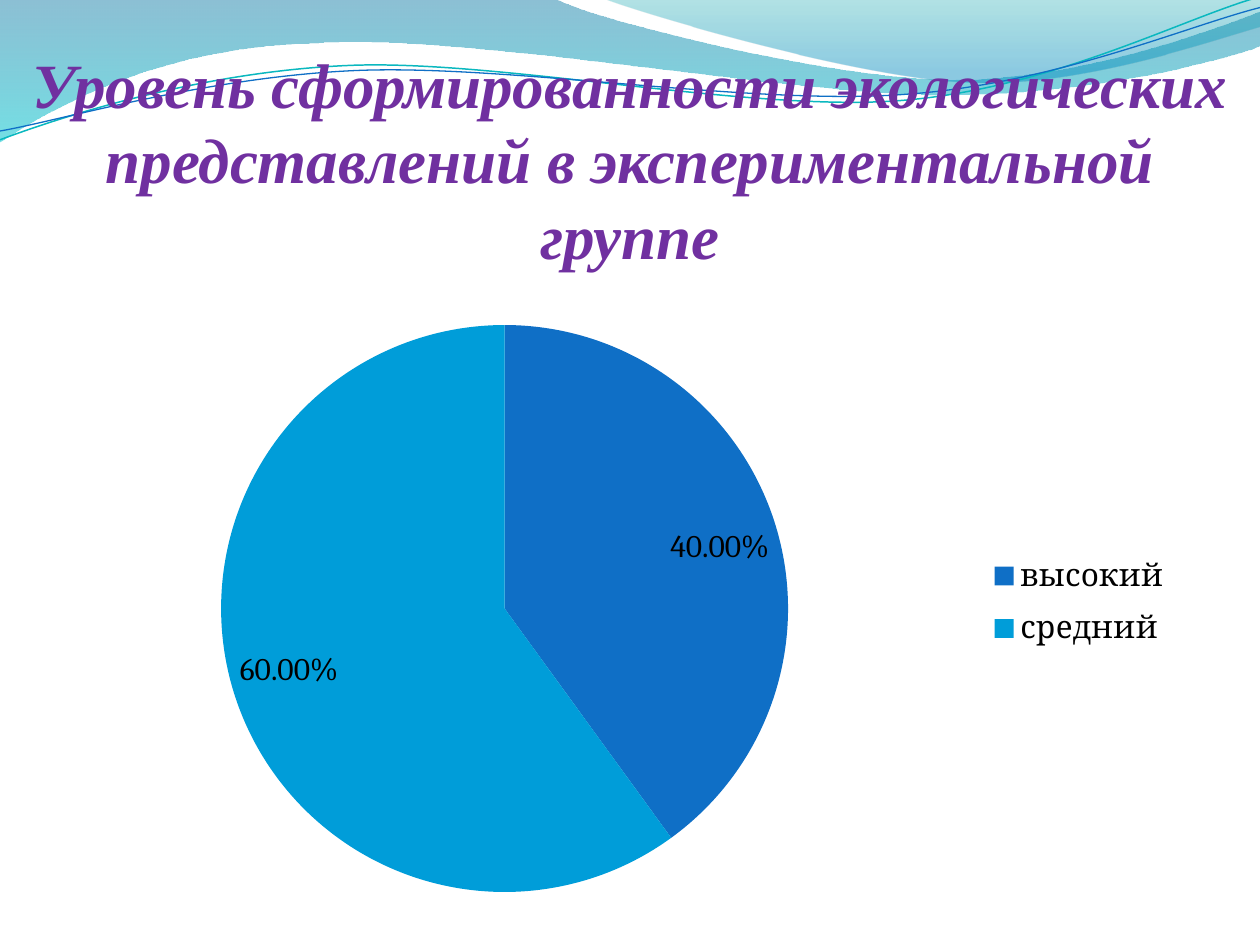
from lxml import etree
from pptx import Presentation
from pptx import util as u
from pptx.chart.data import CategoryChartData
from pptx.dml.color import RGBColor
from pptx.enum import chart as ch, text
from pptx.oxml import parse_xml
from pptx.oxml.ns import nsdecls, qn


def rgb(value):
    return RGBColor.from_string(value)


class Deck:
    title_font, chart_font = "Times New Roman", "Cambria"
    title_color, text_color = "7030A0", "000000"

    def __init__(self):
        self.prs = Presentation()
        self.prs.slide_width, self.prs.slide_height = u.Inches(10), u.Inches(7.5)
        self.slide = self.prs.slides.add_slide(self.prs.slide_layouts[5])

    def curve(self, start, segments, closed):
        """Outline whose segments have one point (line) or three (Bézier)."""
        points = [tuple(map(u.Inches, pt)) for seg in segments for pt in seg]
        builder = self.slide.shapes.build_freeform(*map(u.Inches, start))
        builder.add_line_segments(points, close=closed)
        sp = builder.convert_to_shape()
        sp.shadow.inherit = False
        lines = list(sp._element.iter(qn("a:lnTo")))
        for segment in segments:
            used, lines = lines[:len(segment)], lines[len(segment):]
            if len(used) == 3:
                bezier = etree.Element(qn("a:cubicBezTo"))
                used[0].addprevious(bezier)
                for line in used:
                    bezier.append(line[0])
                    line.getparent().remove(line)
        return sp

    def band(self, start, segments, stops):
        """Closed wave; stops are (position, colour, opacity in percent)."""
        sp = self.curve(start, segments, True)
        sp.line.fill.background()
        sp.fill.gradient()
        sp.fill.gradient_angle = 270
        for stop, (position, color, _) in zip(sp.fill.gradient_stops, stops):
            stop.position = position
            stop.color.rgb = rgb(color)
        clrs = sp._element.spPr.iter(qn("a:srgbClr"))
        for clr, (_, _, opacity) in zip(clrs, stops):
            etree.SubElement(clr, qn("a:alpha")).set("val", str(opacity * 1000))

    def wave_line(self, start, segments, color, width):
        sp = self.curve(start, segments, False)
        sp.fill.background()
        sp.line.color.rgb = rgb(color)
        sp.line.width = u.Pt(width)

    def pie(self, box, values, colors, plot, legend):
        """Plot and legend boxes are in inches from the chart's corner."""
        data = CategoryChartData(number_format="0.00%")
        data.categories = list(values)
        data.add_series("Series 1", list(values.values()))
        chart = self.slide.shapes.add_chart(
            ch.XL_CHART_TYPE.PIE, *map(u.Inches, box), data).chart
        chart.has_title = False
        chart.font.name, chart.font.size = self.chart_font, u.Pt(18)
        chart.font.color.rgb = rgb(self.text_color)
        chart.has_legend = True
        chart.legend.position = ch.XL_LEGEND_POSITION.RIGHT
        chart.legend.include_in_layout = False
        pie = chart.plots[0]
        pie.vary_by_categories = True
        for i, color in enumerate(colors):
            fill = pie.series[0].points[i].format.fill
            fill.solid()
            fill.fore_color.rgb = rgb(color)
        pie.has_data_labels = True
        labels = pie.data_labels
        labels.show_value, labels.show_percentage = True, False
        labels.number_format, labels.number_format_is_linked = "0.00%", False
        labels.position = ch.XL_LABEL_POSITION.BEST_FIT
        area = chart._chartSpace.chart.plotArea
        for old in area.findall(qn("c:layout")):
            area.remove(old)
        area.insert(0, self.layout(plot, box, '<c:layoutTarget val="inner"/>'))
        key = chart.legend._element
        for old in key.findall(qn("c:layout")):
            key.remove(old)
        key.find(qn("c:legendPos")).addnext(self.layout(legend, box))

    @staticmethod
    def layout(part, box, target=""):
        shares = [v / box[2 + i % 2] for i, v in enumerate(part)]
        sizes = "".join(f'<c:{k} val="{v:.4f}"/>' for k, v in zip("xywh", shares))
        return parse_xml(
            f'<c:layout {nsdecls("c")}><c:manualLayout>{target}'
            f'<c:xMode val="edge"/><c:yMode val="edge"/>{sizes}'
            '</c:manualLayout></c:layout>')

    def title(self, box, words):
        sp = self.slide.shapes.title
        sp.left, sp.top, sp.width, sp.height = map(u.Inches, box)
        self.slide.shapes._spTree.append(sp._element)  # in front of the waves
        tf = sp.text_frame
        tf.text = words
        tf.word_wrap = True
        tf.auto_size = text.MSO_AUTO_SIZE.SHAPE_TO_FIT_TEXT
        tf.vertical_anchor = text.MSO_ANCHOR.TOP
        p = tf.paragraphs[0]
        p.alignment = text.PP_ALIGN.CENTER
        p.font.name, p.font.size = self.title_font, u.Pt(36)
        p.font.bold = p.font.italic = True
        p.font.color.rgb = rgb(self.title_color)


def main():
    deck = Deck()
    deck.band((0, 0), [
        [(4.4, -0.01)],
        [(4.76, 0.17), (6.64, 0.63), (7.58, 0.63)],
        [(8.53, 0.63), (9.58, 0.26), (10, 0.09)],
        [(10.01, 0.36)],
        [(9.83, 0.44), (8.7, 0.76), (7.46, 0.75)],
        [(6.22, 0.75), (3.82, 0.28), (2.57, 0.34)],
        [(1.29, 0.36), (0.46, 0.83), (-0.01, 1.13)],
    ], [(0, "0074A1", 45), (1, "00C6CF", 55)])
    deck.band((4.79, -0.01), [
        [(5.09, 0.11), (6.82, 0.62), (7.69, 0.65)],
        [(8.56, 0.69), (9.61, 0.32), (10, 0.21)],
        [(10, 0)],
    ], [(0, "00A1A9", 30), (0.8, "008BBF", 45)])
    deck.wave_line((0, 1.11), [
        [(0.48, 0.93), (1.58, 0.57), (2.77, 0.52)],
        [(3.95, 0.47), (5.93, 0.89), (7.13, 0.8)],
        [(8.33, 0.71), (9.38, 0.15), (9.98, -0.02)],
    ], "0AB8BF", 0.85)
    deck.wave_line((0, 1.04), [
        [(0.47, 0.96), (1.64, 0.61), (2.83, 0.56)],
        [(4.03, 0.51), (5.97, 0.84), (7.17, 0.75)],
        [(8.36, 0.67), (9.41, 0.21), (10, 0.06)],
    ], "0F6FC6", 0.75)
    deck.pie((0.31, 2.27, 9.38, 4.84), {"высокий": 0.4, "средний": 0.6},
             ["0F6FC6", "009DD9"], plot=(0.16, 0.31, 7.07, 4.5),
             legend=(7.41, 2.03, 1.69, 0.96))
    deck.title((0, 0.31, 10, 1.92), "Уровень сформированности экологических "
               "представлений в экспериментальной группе")
    deck.prs.save("out.pptx")


if __name__ == "__main__":
    main()
